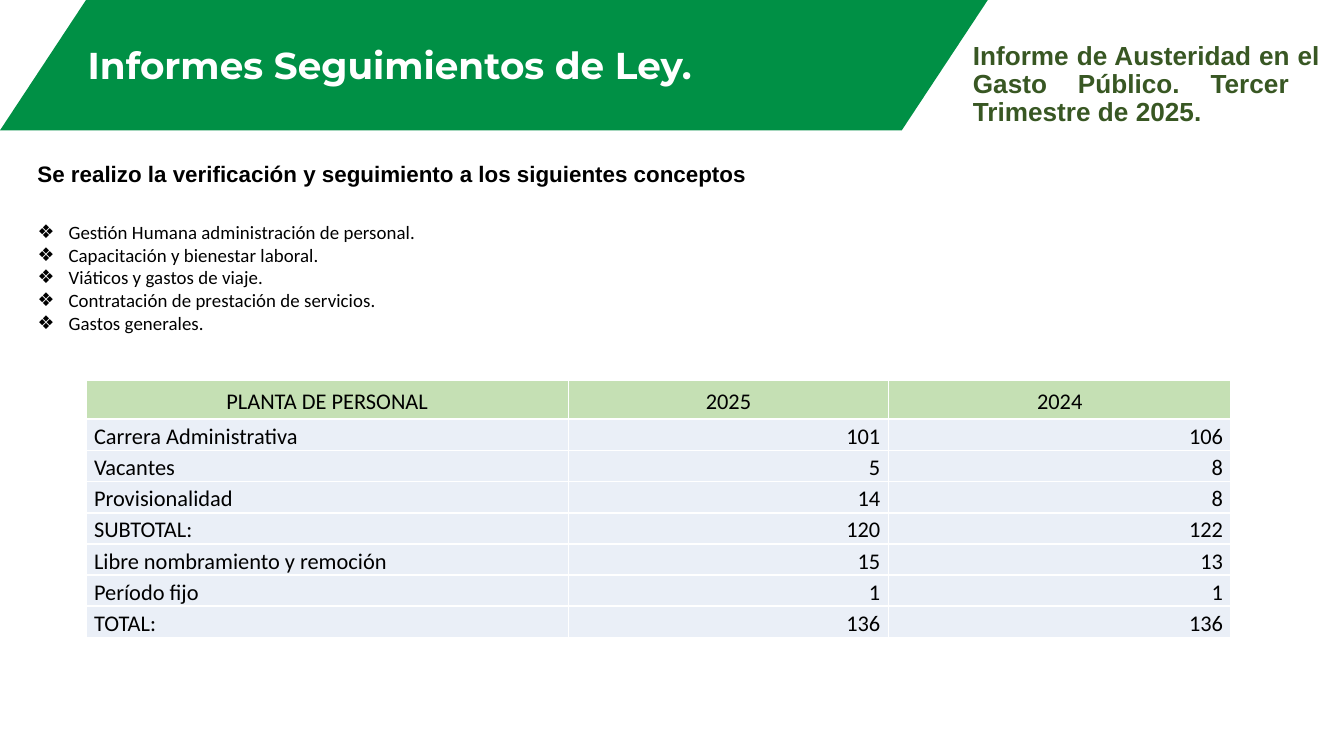
import pptx
import pptx.util
import pptx.dml.color
import pptx.enum.shapes
import pptx.enum.text
import pptx.oxml
import pptx.oxml.ns

Inches = pptx.util.Inches
Pt = pptx.util.Pt
RGBColor = pptx.dml.color.RGBColor
ALIGN = pptx.enum.text.PP_ALIGN
ANCHOR = pptx.enum.text.MSO_ANCHOR

GREEN = RGBColor(0x00, 0x90, 0x45)
DARK_GREEN = RGBColor(0x38, 0x57, 0x23)
HEADER_GREEN = RGBColor(0xC5, 0xE0, 0xB4)
PALE_BLUE = RGBColor(0xEA, 0xEF, 0xF7)
WHITE = RGBColor(0xFF, 0xFF, 0xFF)
BLACK = RGBColor(0x00, 0x00, 0x00)


def add_text(paragraph, text, font, size, color, bold=False):
    run = paragraph.add_run()
    run.text = text
    run.font.name = font
    run.font.size = Pt(size)
    run.font.color.rgb = color
    run.font.bold = bold


def place(box, left, top, width, height):
    """Position a text shape and make its text wrap without autofit."""
    box.left, box.top = Inches(left), Inches(top)
    box.width, box.height = Inches(width), Inches(height)
    box.text_frame.word_wrap = True
    box.text_frame.auto_size = pptx.enum.text.MSO_AUTO_SIZE.NONE


presentation = pptx.Presentation()
presentation.slide_width = Inches(10)
presentation.slide_height = Inches(10 * 9 / 16)
slide = presentation.slides.add_slide(presentation.slide_layouts[1])
title, concepts = slide.placeholders

# Green banner, sent behind the title
banner = slide.shapes.add_shape(
    pptx.enum.shapes.MSO_SHAPE.PARALLELOGRAM, 0, 0, Inches(7.35), Inches(0.97))
banner.adjustments[0] = 0.66
banner.shadow.inherit = False
banner.fill.solid()
banner.fill.fore_color.rgb = GREEN
banner.line.fill.background()
title.element.addprevious(banner.element)

place(title, 0, 0.27, 5.88, 0.43)
title.text_frame.vertical_anchor = ANCHOR.BOTTOM
heading = title.text_frame.paragraphs[0]
heading.alignment = ALIGN.CENTER
heading.line_spacing = 0.9
add_text(heading, "Informes Seguimientos de Ley. ", "Montserrat", 20, WHITE, True)

report = slide.shapes.add_textbox(0, 0, 0, 0)
place(report, 7.14, 0.27, 2.78, 0.74)
report_name = report.text_frame.paragraphs[0]
report_name.alignment = ALIGN.JUSTIFY
report_name.line_spacing = 0.9
add_text(report_name,
         "Informe de Austeridad en el Gasto Público. Tercer  Trimestre de 2025.",
         "Arial", 14, DARK_GREEN, True)

intro = slide.shapes.add_textbox(0, 0, 0, 0)
place(intro, 0.18, 1.14, 6.01, 0.3)
intro_line = intro.text_frame.paragraphs[0]
intro_line.alignment = ALIGN.JUSTIFY
add_text(intro_line,
         "Se realizo la verificación y seguimiento a los siguientes conceptos",
         "Arial", 12, BLACK, True)

# Bulleted list of concepts
place(concepts, 0.18, 1.59, 9.17, 1.08)
concepts.text_frame.vertical_anchor = ANCHOR.TOP
for index, concept in enumerate([
    "Gestión Humana administración de personal.",
    "Capacitación y bienestar laboral.",
    "Viáticos y gastos de viaje.",
    "Contratación de prestación de servicios.",
    "Gastos generales.",
]):
    frame = concepts.text_frame
    item = frame.add_paragraph() if index else frame.paragraphs[0]
    item.space_before = Pt(0)
    properties = item._p.get_or_add_pPr()
    properties.set("marL", str(Inches(0.23)))
    properties.set("indent", str(-Inches(0.23)))
    bullet = pptx.oxml.parse_xml(
        f'<a:buChar {pptx.oxml.ns.nsdecls("a")} char="❖"/>')
    properties.append(bullet)
    add_text(item, concept, "Calibri", 10.15, BLACK)

# Staff table
staff = [
    ("PLANTA DE PERSONAL", "2025", "2024"),
    ("Carrera Administrativa", "101", "106"),
    ("Vacantes", "5", "8"),
    ("Provisionalidad", "14", "8"),
    ("SUBTOTAL:", "120", "122"),
    ("Libre nombramiento y remoción", "15", "13"),
    ("Período fijo", "1", "1"),
    ("TOTAL:", "136", "136"),
]
table = slide.shapes.add_table(
    len(staff), 3, Inches(0.64), Inches(2.83), Inches(8.52), Inches(1.9)).table
for column, width in zip(table.columns, (3.59, 2.38, 2.55)):
    column.width = Inches(width)

for r, values in enumerate(staff):
    table.rows[r].height = Inches(0.23 if r else 0.29)
    for c, value in enumerate(values):
        cell = table.cell(r, c)
        cell.margin_left = cell.margin_right = Inches(0.06)
        cell.margin_top = cell.margin_bottom = 0
        cell.vertical_anchor = ANCHOR.MIDDLE
        for side in ("lnL", "lnR", "lnT", "lnB"):
            cell._tc.get_or_add_tcPr().append(pptx.oxml.parse_xml(
                f'<a:{side} {pptx.oxml.ns.nsdecls("a")} w="{Pt(1)}"><a:solidFill>'
                f'<a:srgbClr val="{WHITE}"/></a:solidFill></a:{side}>'))
        cell.fill.solid()
        cell.fill.fore_color.rgb = PALE_BLUE if r else HEADER_GREEN
        entry = cell.text_frame.paragraphs[0]
        entry.line_spacing = 1.14
        if r == 0:
            entry.alignment = ALIGN.CENTER
        else:
            entry.alignment = ALIGN.RIGHT if c else ALIGN.LEFT
        add_text(entry, value, "Calibri", 12, BLACK)

presentation.save("out.pptx")
